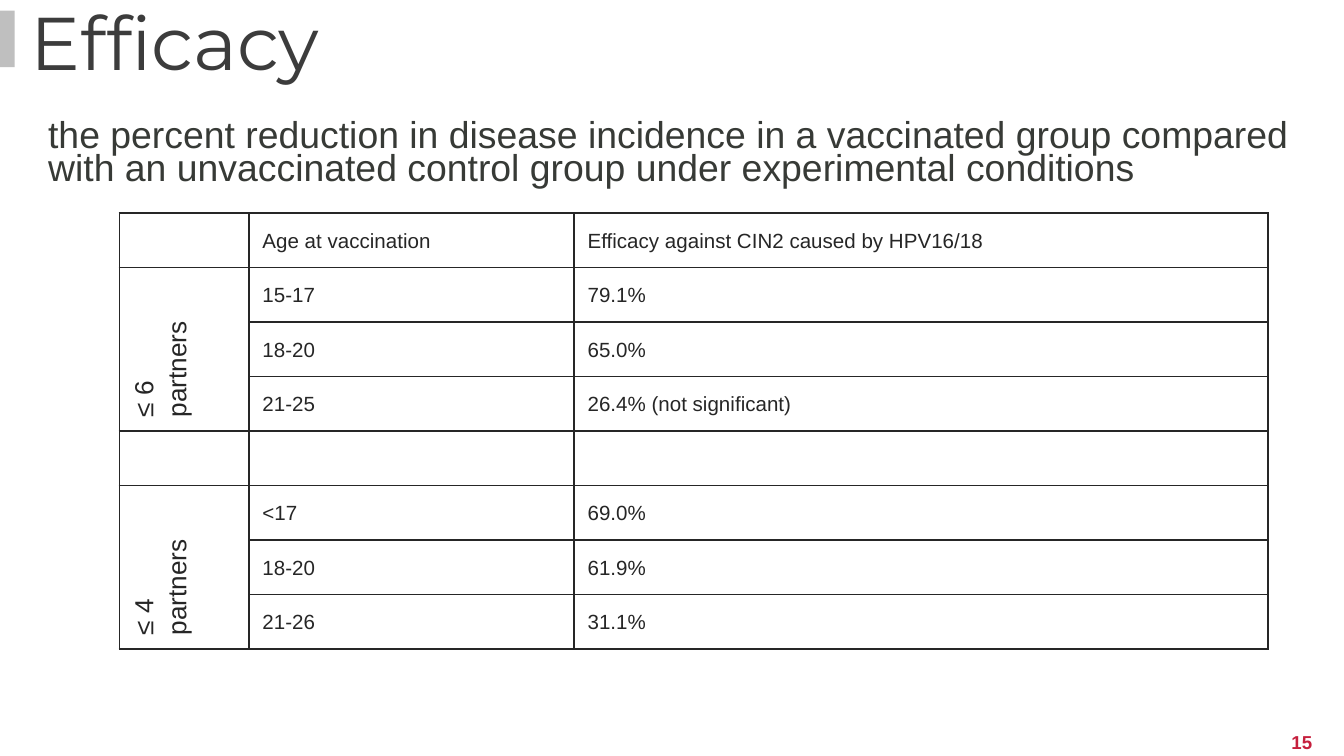
from dataclasses import dataclass

from lxml.etree import SubElement
from pptx import Presentation
from pptx.dml.color import RGBColor
from pptx.enum.shapes import MSO_SHAPE
from pptx.enum.text import MSO_ANCHOR, MSO_AUTO_SIZE, PP_ALIGN
from pptx.oxml.ns import qn
from pptx.util import Pt


@dataclass(frozen=True)
class Theme:
    accent: str = "BFBFBF"
    title: str = "3C3C3C"
    body: str = "373A36"
    table: str = "262626"
    number: str = "C61F3D"
    title_size: int = 40
    body_size: int = 20
    group_size: int = 14
    cell_size: int = 11
    number_size: int = 10
    heading_font: str = "Montserrat"
    text_font: str = "Arial"


theme = Theme()


def write(frame, text, color, paragraph_format, **font_format):
    """Put one formatted paragraph into a text frame."""
    paragraph = frame.paragraphs[0]
    run = paragraph.add_run()
    run.text = text
    run.font.color.rgb = RGBColor.from_string(color)
    for name, value in paragraph_format.items():
        setattr(paragraph, name, value)
    for name, value in ({"name": theme.text_font} | font_format).items():
        setattr(run.font, name, value)


def draw_borders(cell):
    properties = cell._tc.get_or_add_tcPr()
    for side in ("lnL", "lnR", "lnT", "lnB"):
        line = SubElement(properties, qn(f"a:{side}"), w=str(Pt(1)))
        fill = SubElement(line, qn("a:solidFill"))
        SubElement(fill, qn("a:srgbClr"), val=theme.table)


presentation = Presentation()
presentation.slide_width = Pt(720)
presentation.slide_height = Pt(405)
slide = presentation.slides.add_slide(presentation.slide_layouts[5])

# Accent bar
bar = slide.shapes.add_shape(MSO_SHAPE.RECTANGLE, Pt(0), Pt(5.76), Pt(7.92), Pt(30.24))
bar.shadow.inherit = False
bar.fill.solid()
bar.fill.fore_color.rgb = RGBColor.from_string(theme.accent)
bar.line.fill.background()

# Title
title = slide.shapes.title
title_box = {"left": Pt(9.36), "top": Pt(16.56), "width": Pt(692), "height": Pt(16.56)}
for name, value in title_box.items():
    setattr(title, name, value)
title_frame = title.text_frame
title_frame.auto_size = MSO_AUTO_SIZE.NONE
title_frame.vertical_anchor = MSO_ANCHOR.MIDDLE
write(title_frame, "Efficacy", theme.title,
      {"alignment": PP_ALIGN.LEFT, "line_spacing": 0.9},
      name=theme.heading_font, size=Pt(theme.title_size))

# Definition
tight_lines = {"line_spacing": Pt(17.6)}
definition = slide.shapes.add_textbox(Pt(18.72), Pt(62.64), Pt(682.5), Pt(44))
definition.text_frame.word_wrap = True
write(definition.text_frame,
      "the percent reduction in disease incidence in a vaccinated group compared "
      "with an unvaccinated control group under experimental conditions",
      theme.body, tight_lines, size=Pt(theme.body_size))

# Efficacy table
rows = [
    ("", "Age at vaccination", "Efficacy against CIN2 caused by HPV16/18"),
    ("≤ 6 partners", "15-17", "79.1%"),
    ("", "18-20", "65.0%"),
    ("", "21-25", "26.4% (not significant)"),
    ("", "", ""),
    ("≤ 4 partners", "<17", "69.0%"),
    ("", "18-20", "61.9%"),
    ("", "21-26", "31.1%"),
]
column_widths = (69.4, 174.2, 371.8)
row_height = 29.2
group_rows = 3

table = slide.shapes.add_table(
    len(rows), len(column_widths), Pt(64), Pt(114),
    Pt(sum(column_widths)), Pt(row_height * len(rows))).table
table.first_row = False
table.horz_banding = False
for column, width in zip(table.columns, column_widths):
    column.width = Pt(width)

for row_index, row in enumerate(rows):
    table.rows[row_index].height = Pt(row_height)
    for column_index, text in enumerate(row):
        cell = table.cell(row_index, column_index)
        draw_borders(cell)
        cell.fill.background()
        if not text:
            continue
        is_group = column_index == 0
        size = theme.group_size if is_group else theme.cell_size
        write(cell.text_frame, text, theme.table, tight_lines, size=Pt(size))
        if is_group:
            cell.merge(table.cell(row_index + group_rows - 1, 0))
            cell.vertical_anchor = MSO_ANCHOR.MIDDLE
            cell._tc.get_or_add_tcPr().set("vert", "vert270")

# Slide number
number = slide.shapes.add_textbox(Pt(568), Pt(388), Pt(142), Pt(19.44))
number.text_frame.word_wrap = True
write(number.text_frame, "15", theme.number, {"alignment": PP_ALIGN.RIGHT},
      size=Pt(theme.number_size), bold=True)

presentation.save("out.pptx")
